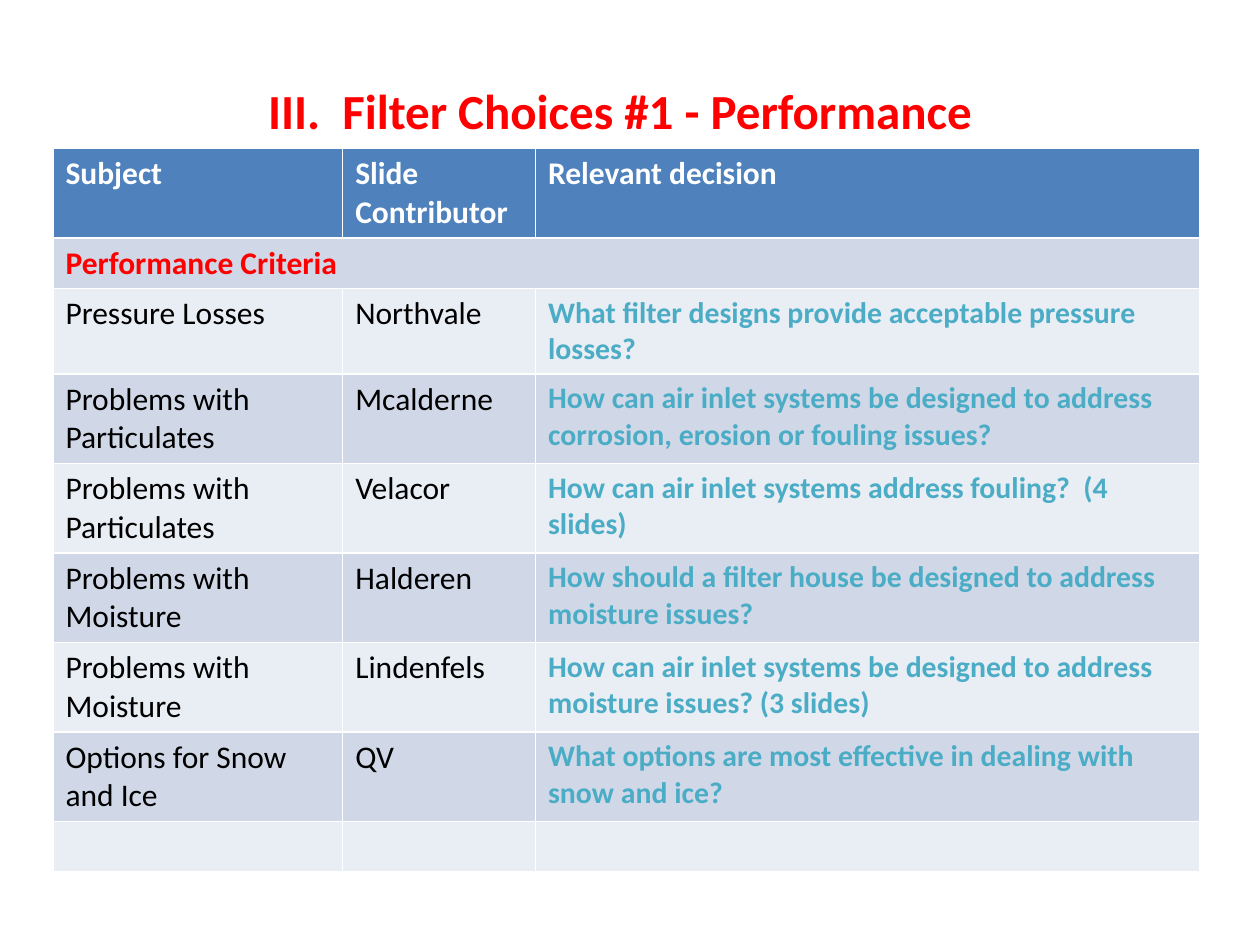
from pptx import Presentation
from pptx.dml.color import RGBColor as RGB
from pptx.enum.text import MSO_ANCHOR as Anchor, PP_ALIGN as Align
from pptx.util import Inches, Pt

COLORS = {
    "accent": "FF0000",
    "header": "4F81BD",
    "header_text": "FFFFFF",
    "band_dark": "D0D8E8",
    "band_light": "E9EDF4",
    "body": "000000",
    "question": "4BACC6",
}
FONT = "Calibri"
LEFT = 0.42
COLUMN_WIDTHS = (2.3, 1.53, 5.27)
ONE_LINE, TWO_SMALL_LINES, TWO_LINES = 0.4, 0.68, 0.71

HEADINGS = ("Subject", "Slide Contributor", "Relevant decision")
SECTION = ("Performance Criteria", "", "")
TOPICS = (
    ("Pressure Losses", "Northvale",
     "What filter designs provide acceptable pressure losses?"),
    ("Problems with Particulates", "Mcalderne",
     "How can air inlet systems be designed to address corrosion, erosion or fouling issues?"),
    ("Problems with Particulates", "Velacor",
     "How can air inlet systems address fouling?  (4 slides)"),
    ("Problems with Moisture", "Halderen",
     "How should a filter house be designed to address moisture issues?"),
    ("Problems with Moisture", "Lindenfels",
     "How can air inlet systems be designed to address moisture issues? (3 slides)"),
    ("Options for Snow and Ice", "QV",
     "What options are most effective in dealing with snow and ice?"),
    ("", "", ""),
)
ROW_HEIGHTS = (TWO_LINES, ONE_LINE, TWO_SMALL_LINES, *[TWO_LINES] * 5, ONE_LINE)


def write(frame, text, size, color, bold):
    paragraph = frame.paragraphs[0]
    paragraph.text = text
    font = paragraph.font
    font.name, font.size, font.bold = FONT, Pt(size), bold
    font.color.rgb = RGB.from_string(COLORS[color])
    return paragraph


def add_title(slide, text):
    title = slide.shapes.add_textbox(Inches(LEFT), Inches(0.25), Inches(9), Inches(1.25))
    frame = title.text_frame
    frame.word_wrap = True
    frame.vertical_anchor = Anchor.MIDDLE
    write(frame, text, 28, "accent", True).alignment = Align.CENTER


def fill_row(row, texts, fill, styles):
    """Write one table row; styles holds (size, color, bold) for each column."""
    for cell, text, style in zip(row.cells, texts, styles):
        cell.fill.solid()
        cell.fill.fore_color.rgb = RGB.from_string(COLORS[fill])
        write(cell.text_frame, text, *style)


def add_decision_table(slide):
    table = slide.shapes.add_table(
        len(ROW_HEIGHTS), len(COLUMN_WIDTHS), Inches(LEFT), Inches(1.18),
        Inches(sum(COLUMN_WIDTHS)), Inches(sum(ROW_HEIGHTS))).table
    for column, width in zip(table.columns, COLUMN_WIDTHS):
        column.width = Inches(width)
    for row, height in zip(table.rows, ROW_HEIGHTS):
        row.height = Inches(height)

    header, section, *topics = table.rows
    fill_row(header, HEADINGS, "header", [(18, "header_text", True)] * 3)
    fill_row(section, SECTION, "band_dark", [(18, "accent", True)] * 3)
    table.cell(1, 0).merge(table.cell(1, 2))

    topic_styles = [(18, "body", False)] * 2 + [(17, "question", True)]
    for index, (row, texts) in enumerate(zip(topics, TOPICS)):
        fill_row(row, texts, ("band_light", "band_dark")[index % 2], topic_styles)


def main():
    deck = Presentation()
    deck.slide_width, deck.slide_height = Inches(10), Inches(7.5)
    slide = deck.slides.add_slide(deck.slide_layouts[6])
    add_title(slide, "III.  Filter Choices #1 - Performance")
    add_decision_table(slide)
    deck.save("out.pptx")


if __name__ == "__main__":
    main()
